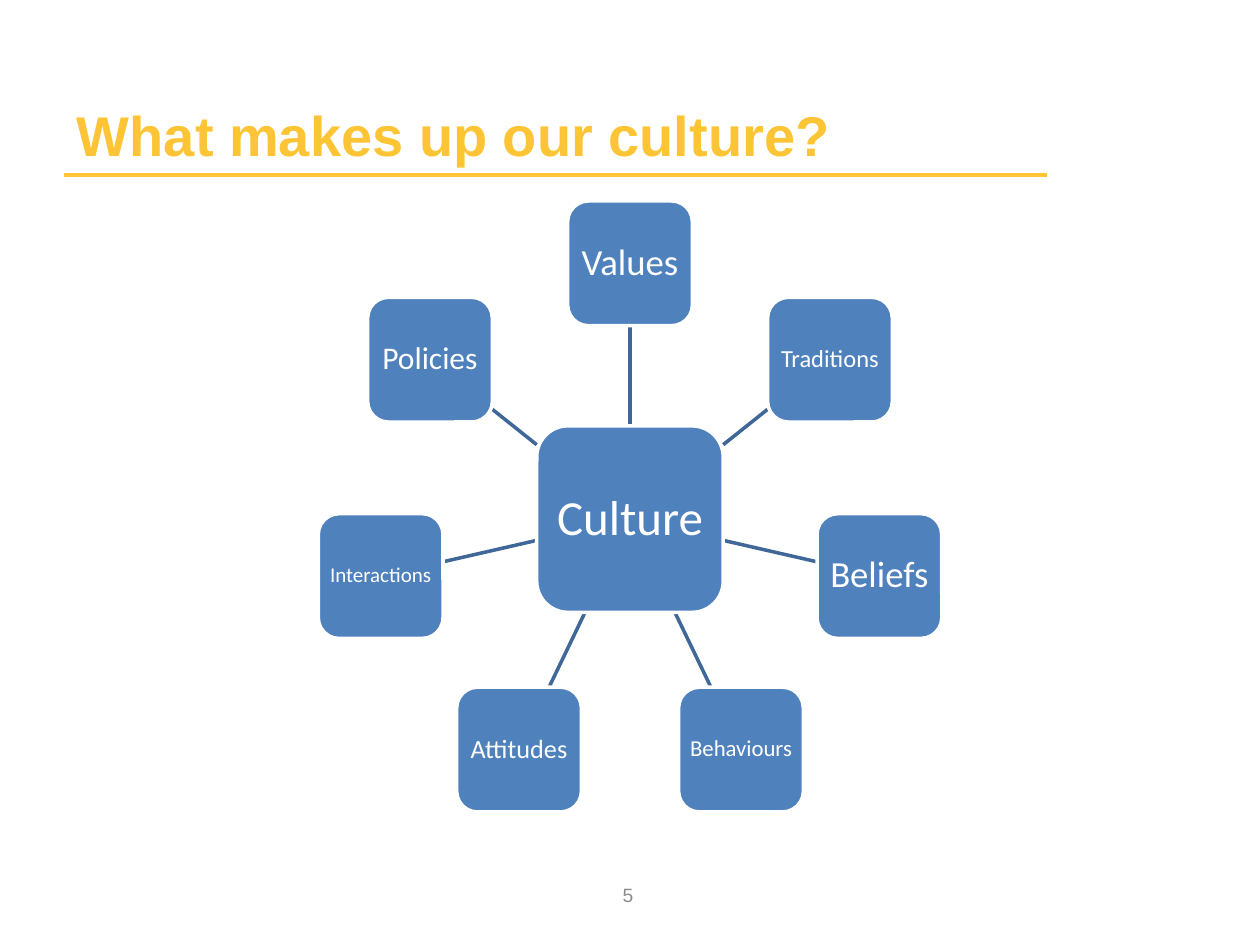
import math
from lxml import etree
from pptx import Presentation
from pptx.dml.color import RGBColor
from pptx.enum import shapes, text
from pptx.oxml import ns
from pptx.util import Inches, Pt

TITLE = "What makes up our culture?"
PAGE_NUMBER = "5"
HUB = ("Culture", 28)
PARTS = [
    ("Values", 21),
    ("Traditions", 14),
    ("Beliefs", 21),
    ("Behaviours", 13),
    ("Attitudes", 15),
    ("Interactions", 12),
    ("Policies", 18),
]
GOLD, BLUE, NAVY, WHITE, GREY = "FDC536", "4F81BD", "3F6797", "FFFFFF", "8C8C8C"
CENTER_X, CENTER_Y, RADIUS = 5, 4.12, 2.03
HUB_SIZE, PART_SIZE = 1.48, 0.99


def color(value):
    return RGBColor.from_string(value)


def write(shape, words, size, font, fill, align, anchor, bold=False):
    frame = shape.text_frame
    frame.word_wrap = True
    frame.vertical_anchor = anchor
    para = frame.paragraphs[0]
    para.text = words
    para.alignment = align
    para.font.size = Pt(size)
    para.font.name = font
    para.font.bold = bold
    para.font.color.rgb = color(fill)
    return para


def add_line(page, start, end, stroke):
    line = page.shapes.add_connector(
        shapes.MSO_CONNECTOR.STRAIGHT, *map(Inches, (*start, *end)))
    line.line.color.rgb = color(stroke)
    line.line.width = Pt(2)
    etree.SubElement(line._element.spPr, ns.qn("a:effectLst"))
    return line


def add_box(page, label, size, x, y, side):
    box = page.shapes.add_shape(
        shapes.MSO_SHAPE.ROUNDED_RECTANGLE,
        *map(Inches, (x - side / 2, y - side / 2, side, side)))
    box.shadow.inherit = False
    box.fill.solid()
    box.fill.fore_color.rgb = color(BLUE)
    box.line.color.rgb = color(WHITE)
    box.line.width = Pt(2)
    frame = box.text_frame
    frame.margin_left = frame.margin_right = Inches(0.04)
    frame.margin_top = frame.margin_bottom = Inches(0.04)
    para = write(box, label, size, "Calibri", WHITE,
                 text.PP_ALIGN.CENTER, text.MSO_ANCHOR.MIDDLE)
    para.line_spacing = 0.9
    return box


def add_wheel(page):
    spokes, centers = [], []
    for index in range(len(PARTS)):
        angle = 2 * math.pi * index / len(PARTS)
        dx, dy = math.sin(angle), -math.cos(angle)
        reach = max(abs(dx), abs(dy))
        inner = HUB_SIZE / 2 / reach
        outer = RADIUS - PART_SIZE / 2 / reach
        start, end, center = [
            (CENTER_X + dx * r, CENTER_Y + dy * r) for r in (inner, outer, RADIUS)]
        spokes.append(add_line(page, start, end, NAVY))
        centers.append(center)
    hub = add_box(page, *HUB, CENTER_X, CENTER_Y, HUB_SIZE)
    boxes = [add_box(page, *part, *center, PART_SIZE)
             for part, center in zip(PARTS, centers)]
    spokes[0].begin_connect(hub, 0)
    spokes[0].end_connect(boxes[0], 2)


def main():
    deck = Presentation()
    deck.slide_width, deck.slide_height = Inches(10), Inches(7.5)
    page = deck.slides.add_slide(deck.slide_layouts[5])

    add_line(page, (0.51, 1.39), (8.31, 1.39), GOLD)
    title = page.shapes.title
    title.left, title.top, title.width, title.height = map(
        Inches, (0.51, 0.29, 7.8, 1.09))
    write(title, TITLE, 32, "Arial", GOLD,
          text.PP_ALIGN.LEFT, text.MSO_ANCHOR.BOTTOM, bold=True)

    add_wheel(page)

    number = page.shapes.add_textbox(*map(Inches, (3.82, 6.9, 2.33, 0.4)))
    write(number, PAGE_NUMBER, 11, "Arial", GREY,
          text.PP_ALIGN.CENTER, text.MSO_ANCHOR.MIDDLE)
    deck.save("out.pptx")


if __name__ == "__main__":
    main()
